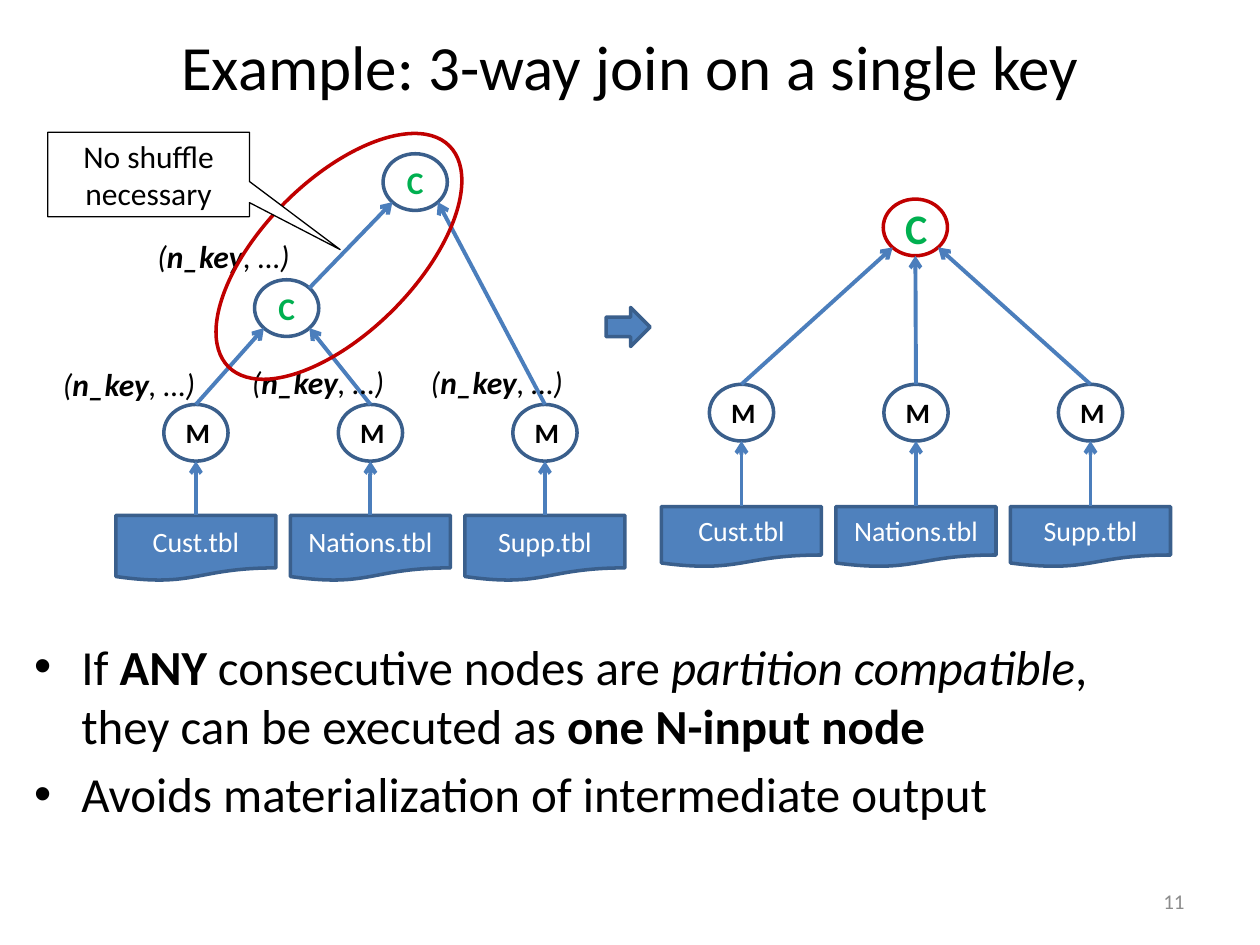
import math

from lxml import etree
from pptx import Presentation
from pptx.dml.color import RGBColor
from pptx.enum import shapes, text
from pptx.oxml.ns import qn
from pptx.util import Inches, Pt

FONT = "Calibri"
BLACK, WHITE, GRAY = "000000", "FFFFFF", "8C8C8C"
BLUE, OUTLINE, ARROW = "4F81BD", "3A5F8C", "4B7EBC"
RED, GREEN = "C00000", "00B050"
NODE_W, NODE_H = 0.51, 0.45
TABLE_W, TABLE_PITCH = 1.27, 1.385
TABLES = ["Cust.tbl", "Nations.tbl", "Supp.tbl"]
SHAPE = shapes.MSO_SHAPE
ALIGN = text.PP_ALIGN


def rgb(value):
    return RGBColor.from_string(value)


def rim(node, dx, dy):
    """Point on the edge of an ellipse, in direction (dx, dy)."""
    reach = 0.5 / math.hypot(dx, dy)
    return (node.left + int(node.width * (0.5 + dx * reach)),
            node.top + int(node.height * (0.5 + dy * reach)))


class SlideBuilder:
    def __init__(self, slide):
        self.slide = slide

    def style(self, paragraph, size, color=BLACK, align=None, bold=None, italic=None):
        font = paragraph.font
        font.name, font.size, font.color.rgb = FONT, Pt(size), rgb(color)
        font.bold, font.italic = bold, italic
        paragraph.alignment = align

    def runs(self, paragraph, parts):
        """Each part is a pair of wording and an emphasis: "", "b" or "i"."""
        for wording, emphasis in parts:
            run = paragraph.add_run()
            run.text = wording
            if "b" in emphasis:
                run.font.bold = True
            if "i" in emphasis:
                run.font.italic = True

    def placeholder(self, index, left, top, width, height):
        holder = self.slide.placeholders[index]
        holder.left, holder.top = Inches(left), Inches(top)
        holder.width, holder.height = Inches(width), Inches(height)
        return holder.text_frame

    def shape(self, kind, left, top, width, height, fill=None, line=OUTLINE,
              weight=2, label="", size=16, color=WHITE, bold=None):
        shape = self.slide.shapes.add_shape(
            kind, Inches(left), Inches(top), Inches(width), Inches(height))
        shape.shadow.inherit = False
        if fill:
            shape.fill.solid()
            shape.fill.fore_color.rgb = rgb(fill)
        else:
            shape.fill.background()
        shape.line.color.rgb = rgb(line)
        shape.line.width = Pt(weight)
        if label:
            shape.text_frame.text = label
            self.style(shape.text_frame.paragraphs[0], size, color, ALIGN.CENTER, bold)
        return shape

    def node(self, left, top, label, size=16, color=BLACK, line=OUTLINE):
        return self.shape(SHAPE.OVAL, left, top, NODE_W, NODE_H, line=line,
                          label=label, size=size, color=color, bold=True)

    def arrow(self, source, target, start=(0, -1), end=(0, 1)):
        connector = self.slide.shapes.add_connector(
            shapes.MSO_CONNECTOR.STRAIGHT, *rim(source, *start), *rim(target, *end))
        if start == (0, -1):
            connector.begin_connect(source, 0)
        connector.line.color.rgb = rgb(ARROW)
        connector.line.width = Pt(2.25)
        properties = connector._element.spPr
        etree.SubElement(properties.find(qn("a:ln")), qn("a:tailEnd"), type="arrow")
        etree.SubElement(properties, qn("a:effectLst"))

    def inputs(self, left, table_top, table_height, mapper_top):
        """A row of tables, each feeding the mapper above it."""
        mappers = []
        for column, name in enumerate(TABLES):
            x = left + column * TABLE_PITCH
            table = self.shape(SHAPE.FLOWCHART_DOCUMENT, x, table_top, TABLE_W,
                               table_height, fill=BLUE, label=name)
            mapper = self.node(x + (TABLE_W - NODE_W) / 2, mapper_top, "M")
            self.arrow(table, mapper)
            mappers.append(mapper)
        return mappers

    def textbox(self, left, top, width, height, wrap=False):
        frame = self.slide.shapes.add_textbox(
            Inches(left), Inches(top), Inches(width), Inches(height)).text_frame
        frame.word_wrap = wrap
        return frame

    def key_label(self, left, top):
        paragraph = self.textbox(left, top, 1.27, 0.4).paragraphs[0]
        self.style(paragraph, 18, italic=True)
        self.runs(paragraph, [("(", ""), ("n_key", "b"), (", …)", "")])


def main():
    deck = Presentation()
    deck.slide_width, deck.slide_height = Inches(10), Inches(7.5)
    build = SlideBuilder(deck.slides.add_slide(deck.slide_layouts[1]))

    # Title
    title = build.placeholder(0, 0.5, 0.13, 9, 0.78)
    title.text = "Example: 3-way join on a single key"
    build.style(title.paragraphs[0], 36, align=ALIGN.CENTER)

    # Merged plan: one combiner with three inputs
    mappers = build.inputs(5.25, 4.02, 0.48, 3.05)
    merged = build.node(7.01, 1.58, "C", 24, GREEN, RED)
    for mapper, side in zip(mappers, (-1, 0, 1)):
        build.arrow(mapper, merged, end=(side, 1))

    # Takeaways
    body = build.placeholder(1, 0.17, 5, 9, 2.08)
    takeaways = [
        [("If ", ""), ("ANY", "b"), (" consecutive nodes are ", ""),
         ("partition compatible", "i"), (", they can be executed as ", ""),
         ("one N-input node", "b")],
        [("Avoids materialization of intermediate output", "")],
    ]
    for index, parts in enumerate(takeaways):
        paragraph = body.add_paragraph() if index else body.paragraphs[0]
        build.style(paragraph, 28)
        build.runs(paragraph, parts)

    # Two-step plan: two chained combiners
    customers, nations, suppliers = build.inputs(0.92, 4.09, 0.52, 3.21)
    first_join = build.node(2.02, 2.22, "C", 18, GREEN)
    second_join = build.node(3.04, 1.22, "C", 18, GREEN)
    build.arrow(customers, first_join, end=(-1, 1))
    build.arrow(nations, first_join, end=(1, 1))
    build.arrow(first_join, second_join, start=(1, -1), end=(-1, 1))
    build.arrow(suppliers, second_join, end=(1, 1))

    # Step from the first plan to the second
    build.shape(SHAPE.RIGHT_ARROW, 4.81, 2.44, 0.35, 0.31, fill=BLUE)

    # Partition keys
    for left, top in [(0.4, 2.85), (1.15, 1.83), (1.9, 2.83), (3.32, 2.83)]:
        build.key_label(left, top)

    # Highlight and callout
    highlight = build.shape(SHAPE.OVAL, 1.45, 1.43, 2.48, 1.21, line=RED)
    highlight.rotation = 315
    callout = build.shape(SHAPE.RECTANGULAR_CALLOUT, 0.38, 1.05, 1.6, 0.67,
                          fill=WHITE, line=BLACK, weight=0.75,
                          label="No shuffle necessary", size=18, color=BLACK)
    callout.adjustments[0], callout.adjustments[1] = 0.95, 0.89

    # Slide number
    number = build.textbox(7.17, 6.95, 2.33, 0.4, wrap=True)
    number.vertical_anchor = text.MSO_ANCHOR.MIDDLE
    number.text = "11"
    build.style(number.paragraphs[0], 12, GRAY, ALIGN.RIGHT)

    deck.save("out.pptx")


if __name__ == "__main__":
    main()
